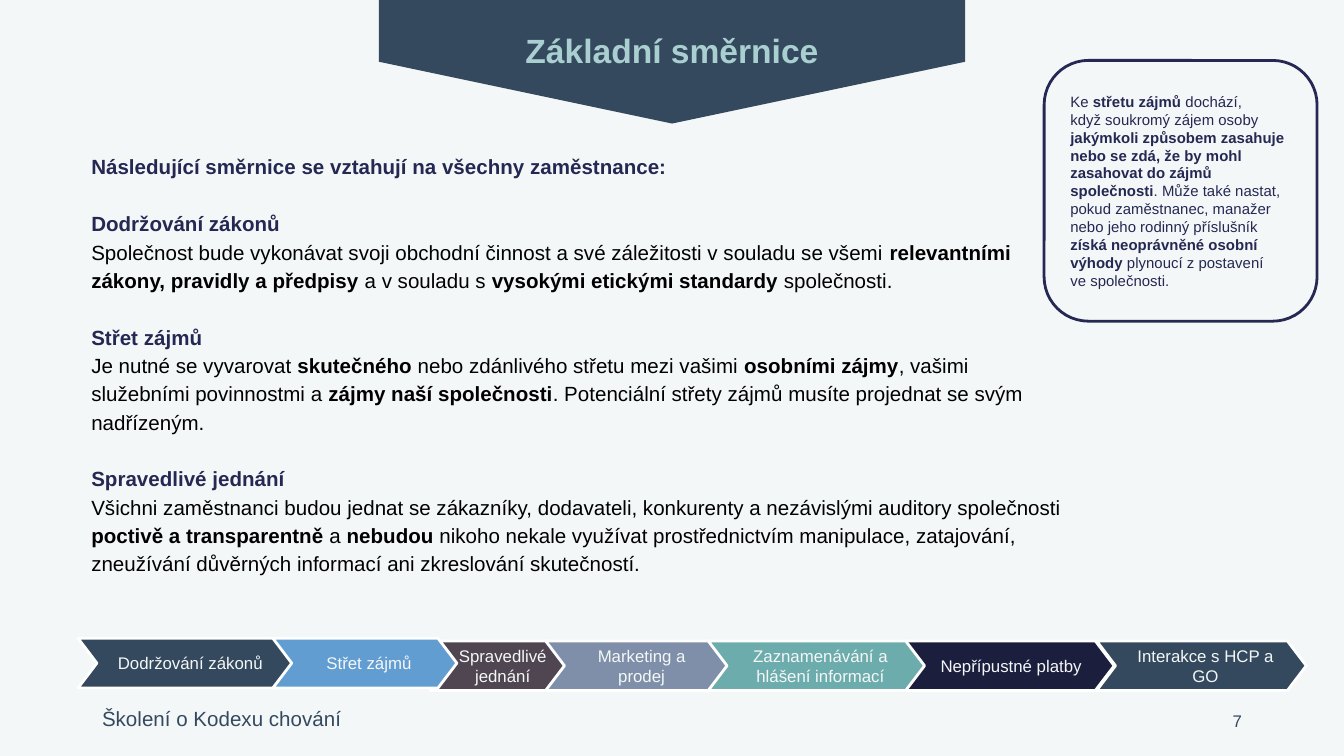
from dataclasses import dataclass

from pptx import Presentation
from pptx.dml.color import RGBColor
from pptx.enum.shapes import MSO_SHAPE as Preset
from pptx.enum.text import MSO_ANCHOR as Anchor, PP_ALIGN as Align
from pptx.util import Pt

NAVY = "242852"
SLATE = "34495E"
PALE = "F4F7F7"
BLACK = "000000"
WHITE = "FFFFFF"
BLANK_LINE = 15.2
SMALL_INSETS = (5, 3, 5, 3)
WIDE_INSETS = (7.2, 7.2, 7.2, 7.2)
CHEVRON_INSETS = (4.3, 0, 0, 0)


@dataclass
class Box:
    left: float
    top: float
    width: float
    height: float

    def lengths(self):
        return Pt(self.left), Pt(self.top), Pt(self.width), Pt(self.height)


@dataclass
class Step:
    label: str
    left: float
    top: float
    width: float
    fill: str


@dataclass
class Rule:
    heading: str
    body: str


STEPS = [
    Step("Spravedlivé jednání", 230.4, 343.4, 73.5, "4F4651"),
    Step("Nepřípustné platby ", 484.6, 343.4, 112.3, "1B1E3D"),
    Step("Marketing a prodej", 292.3, 343.4, 98.6, "7F8FA9"),
    Step("Zaznamenávání a hlášení informací", 379.4, 343.4, 115.9, "6DACAC"),
    Step("Dodržování zákonů", 41.8, 342, 115.9, SLATE),
    Step("Střet zájmů", 146.2, 342, 98.6, "629DD1"),
    Step("Interakce s HCP a GO", 587.5, 343.4, 112.3, SLATE),
]

INTRO = "**Následující směrnice se vztahují na všechny zaměstnance:**"

RULES = [
    Rule(
        "Dodržování zákonů",
        "Společnost bude vykonávat svoji obchodní činnost a své záležitosti "
        "v souladu se všemi **relevantními zákony, pravidly a předpisy** "
        "a v souladu s **vysokými etickými standardy** společnosti.",
    ),
    Rule(
        "Střet zájmů",
        "Je nutné se vyvarovat **skutečného** nebo zdánlivého střetu mezi "
        "vašimi **osobními zájmy**, vašimi služebními povinnostmi "
        "a **zájmy naší společnosti**. Potenciální střety zájmů musíte "
        "projednat se svým nadřízeným.",
    ),
    Rule(
        "Spravedlivé jednání",
        "Všichni zaměstnanci budou jednat se zákazníky, dodavateli, "
        "konkurenty a nezávislými auditory společnosti **poctivě "
        "a transparentně **a **nebudou **nikoho nekale využívat "
        "prostřednictvím manipulace, zatajování, zneužívání důvěrných "
        "informací ani zkreslování skutečností.",
    ),
]

CONFLICT = (
    "Ke **střetu zájmů** dochází, \nkdyž soukromý zájem osoby "
    "**jakýmkoli způsobem zasahuje nebo se zdá, že by mohl zasahovat "
    "do zájmů společnosti**. Může také nastat, pokud zaměstnanec, manažer "
    "nebo jeho rodinný příslušník **získá neoprávněné osobní výhody** "
    "plynoucí z postavení \nve společnosti."
)


def rgb(code: str) -> RGBColor:
    return RGBColor.from_string(code)


def frame_of(owner, insets, anchor=Anchor.TOP):
    frame = owner.text_frame
    frame.word_wrap = True
    frame.vertical_anchor = anchor
    (frame.margin_left, frame.margin_top,
     frame.margin_right, frame.margin_bottom) = map(Pt, insets)
    return frame


def write(frame, text: str, *, size: float, color: str, align=Align.LEFT,
          spacing: float = 1.0, before: float = 0) -> None:
    paragraph = frame.paragraphs[-1]
    if paragraph.runs:
        paragraph = frame.add_paragraph()
    paragraph.alignment = align
    paragraph.line_spacing = spacing
    paragraph.space_before = Pt(before)
    for index, part in enumerate(text.split("**")):
        for row, words in enumerate(part.split("\n")):
            if row:
                paragraph.add_line_break()
            if words:
                run = paragraph.add_run()
                run.text = words
                run.font.name = "Arial"
                run.font.size = Pt(size)
                run.font.bold = index % 2 == 1
                run.font.color.rgb = rgb(color)


def add_label(slide, box: Box, insets=SMALL_INSETS, anchor=Anchor.TOP):
    return frame_of(slide.shapes.add_textbox(*box.lengths()), insets, anchor)


def add_figure(slide, preset, box: Box, adjustment: float,
               fill: str = "", line: str = ""):
    figure = slide.shapes.add_shape(preset, *box.lengths())
    figure.shadow.inherit = False
    figure.adjustments[0] = adjustment
    if fill:
        figure.fill.solid()
        figure.fill.fore_color.rgb = rgb(fill)
    else:
        figure.fill.background()
    if line:
        figure.line.color.rgb = rgb(line)
        figure.line.width = Pt(1.5)
    else:
        figure.line.fill.background()
    return figure


def add_step(slide, step: Step) -> None:
    chevron = add_figure(slide, Preset.CHEVRON,
                         Box(step.left, step.top, step.width, 26.6),
                         0.38, step.fill, WHITE)
    write(frame_of(chevron, CHEVRON_INSETS, Anchor.MIDDLE), step.label,
          size=9, color=PALE, align=Align.CENTER)


def main() -> None:
    deck = Presentation()
    deck.slide_width, deck.slide_height = Pt(720), Pt(405)
    slide = deck.slides.add_slide(deck.slide_layouts[6])
    slide.background.fill.solid()
    slide.background.fill.fore_color.rgb = rgb(PALE)

    write(add_label(slide, Box(49.7, 375.1, 172.8, 18)),
          "Školení o Kodexu chování", size=11, color=SLATE)

    banner = add_figure(slide, Preset.PENTAGON,
                        Box(326.9, -123.9, 66.2, 314), 0.5, SLATE)
    banner.rotation = 90
    write(add_label(slide, Box(160.6, 13, 398.9, 27.4)),
          "**Základní směrnice**", size=18, color="AACFD0",
          align=Align.CENTER)

    write(add_label(slide, Box(508.3, 375.1, 162, 21.6),
                    anchor=Anchor.MIDDLE),
          "7", size=9, color=SLATE, align=Align.RIGHT)

    guidelines = add_label(slide, Box(41.8, 77, 538.6, 253.4), WIDE_INSETS)
    write(guidelines, INTRO, size=11, color=NAVY, spacing=0.9)
    for rule in RULES:
        write(guidelines, f"**{rule.heading}**", size=11, color=NAVY,
              spacing=1.15, before=BLANK_LINE)
        write(guidelines, rule.body, size=11, color=BLACK, spacing=1.15)

    callout = add_figure(slide, Preset.ROUNDED_RECTANGLE,
                         Box(559.4, 32.4, 146.2, 139.7), 0.17, line=NAVY)
    write(frame_of(callout, WIDE_INSETS, Anchor.MIDDLE), CONFLICT,
          size=8, color=NAVY)

    for step in STEPS:
        add_step(slide, step)

    deck.save("out.pptx")


if __name__ == "__main__":
    main()
